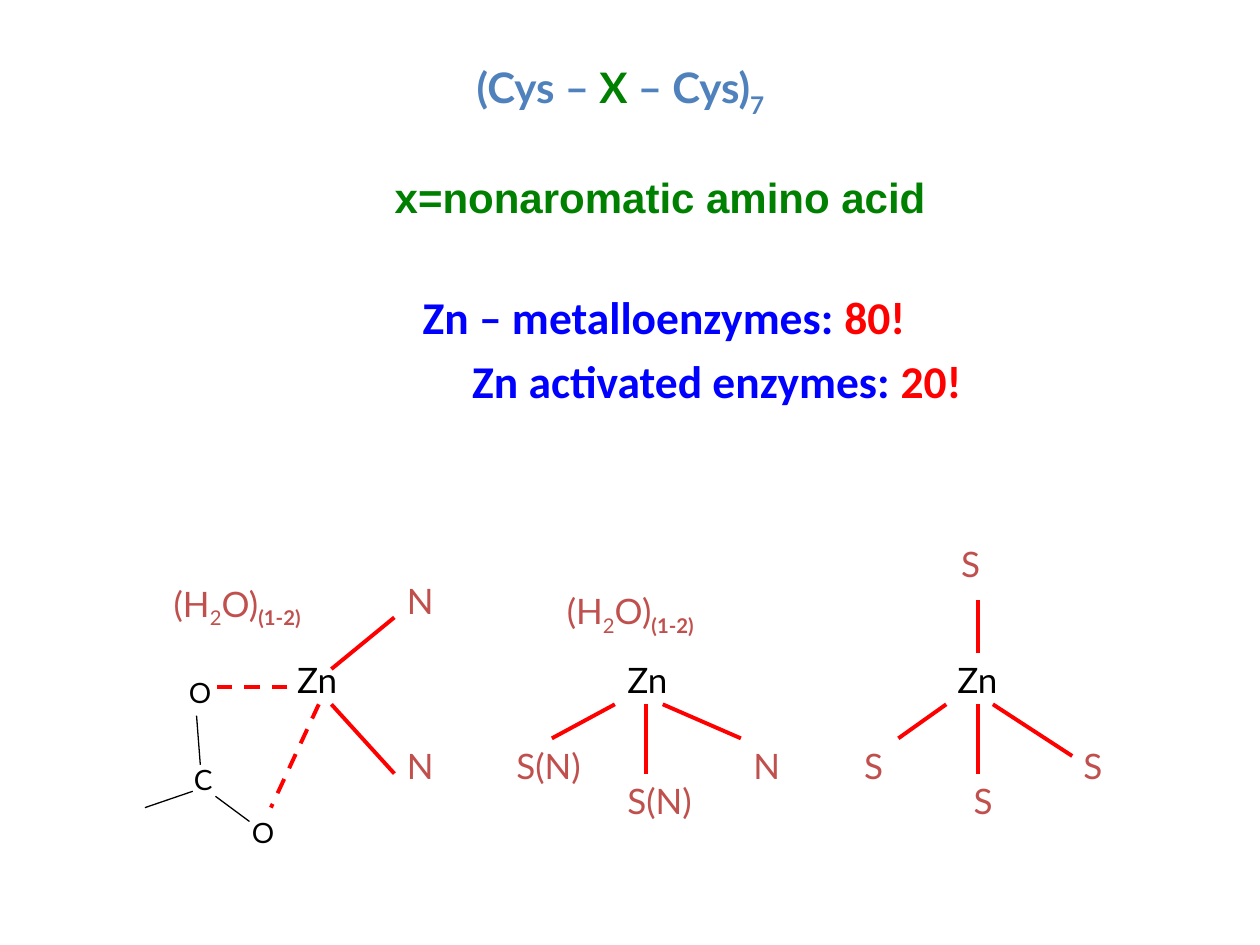
from pptx import Presentation
from pptx.dml.color import RGBColor
from pptx.enum.dml import MSO_LINE
from pptx.enum.shapes import MSO_CONNECTOR as CONNECTOR, MSO_SHAPE as SHAPE
from pptx.enum.text import MSO_ANCHOR as ANCHOR, MSO_AUTO_SIZE as AUTO_SIZE, PP_ALIGN as ALIGN
from pptx.oxml.ns import qn
from pptx.util import Inches, Pt

BLACK, RED, GREEN, BLUE = "000000", "FF0000", "008000", "0000FF"
STEEL, LIGAND, WHITE = "4F81BD", "C0504D", "FFFFFF"
ZINC_TOP = 5.18
ZINC_LEFTS = (2.26, 4.88, 7.5)
WATER_RUNS = [("(H", LIGAND), ("2", LIGAND, True), ("O)", LIGAND), ("(1-2)", LIGAND, True, True)]
WATER_PLACES = ((1.28, 4.57), (4.4, 4.63))
LIGAND_WIDTHS = {"S": 0.36, "N": 0.39, "S(N)": 0.75}
LIGANDS = (
    ("N", 3.13, 4.55), ("N", 3.13, 5.86),
    ("S(N)", 4, 5.86), ("S(N)", 4.88, 6.14), ("N", 5.88, 5.86),
    ("S", 7.53, 4.26), ("S", 8.5, 5.86), ("S", 7.63, 6.14), ("S", 6.76, 5.86),
)
COORDINATION_BONDS = (
    (2.63, 5.31, 3.13, 4.9), (2.63, 5.59, 3.13, 6.14),
    (4.88, 5.59, 4.38, 5.86), (5.13, 5.59, 5.13, 6.14), (5.26, 5.59, 5.88, 5.86),
    (7.51, 5.59, 7.13, 5.86), (7.76, 5.59, 7.76, 6.14), (7.88, 5.59, 8.51, 6),
    (7.76, 5.18, 7.76, 4.76),
)
CARBOXYL_ATOMS = (("O", 1.4, 5.31, 0.36), ("O", 1.9, 6.42, 0.36), ("C", 1.44, 6, 0.34))
DASHED_BONDS = ((2.53, 5.59, 2.15, 6.41), (2.28, 5.45, 1.65, 5.45))
CARBOXYL_BONDS = ((1.53, 6.28, 1.15, 6.41), (1.56, 5.68, 1.59, 6.07), (1.71, 6.32, 1.98, 6.52))


def rgb(value):
    """Turn a hex string into a colour."""
    return RGBColor.from_string(value)


def place(shape, left, top, width, height):
    """Move and size a shape in inches."""
    shape.left, shape.top = Inches(left), Inches(top)
    shape.width, shape.height = Inches(width), Inches(height)


def write_runs(paragraph, runs, size, font="Lato", bold=False, align=ALIGN.LEFT):
    """Write runs given as text, colour, subscript flag and bold flag."""
    paragraph.alignment = align
    for text, color, *flags in runs:
        subscript, strong = (flags + [False, False])[:2]
        run = paragraph.add_run()
        run.text = text
        run.font.name, run.font.size = font, Pt(size)
        run.font.bold = bold or strong
        run.font.color.rgb = rgb(color)
        if subscript:
            run.font._element.set("baseline", "-25000")


def set_frame(text_frame, wrap):
    """Anchor text at the top without automatic sizing."""
    text_frame.auto_size = AUTO_SIZE.NONE
    text_frame.vertical_anchor = ANCHOR.TOP
    text_frame.word_wrap = wrap


def write_heading(shape, box, runs, font):
    """Fill a centred bold heading."""
    place(shape, *box)
    set_frame(shape.text_frame, False)
    write_runs(shape.text_frame.paragraphs[0], runs, 24, font, True, ALIGN.CENTER)


def write_body(body):
    """Fill the body with the two enzyme counts."""
    place(body, 0.51, 2.33, 9, 1.5)
    set_frame(body.text_frame, True)
    lines = (("Zn – metalloenzymes: ", "80!", 0.52, 0.8), ("Zn activated enzymes: ", "20!", 1.36, 1.0))
    for index, (name, count, margin, spacing) in enumerate(lines):
        paragraph = body.text_frame.paragraphs[0] if index == 0 else body.text_frame.add_paragraph()
        write_runs(paragraph, [(name, BLUE), (count, RED)], 26, "Calibri", True, ALIGN.CENTER)
        paragraph.line_spacing = spacing
        properties = paragraph._p.get_or_add_pPr()
        properties.set("marL", str(Inches(margin)))
        properties.set("indent", "0")
        properties.append(properties.makeelement(qn("a:buNone"), {}))


def add_label(group, box, runs, size=20):
    """Add a white box with an atom or ligand name."""
    label = group.shapes.add_shape(SHAPE.RECTANGLE, *map(Inches, box))
    label.shadow.inherit = False
    label.fill.solid()
    label.fill.fore_color.rgb = rgb(WHITE)
    label.line.fill.background()
    set_frame(label.text_frame, False)
    write_runs(label.text_frame.paragraphs[0], runs, size)


def add_bonds(group, bonds, color=RED, width=2.25, dashed=False):
    """Draw straight bonds in one style."""
    for ends in bonds:
        bond = group.shapes.add_connector(CONNECTOR.STRAIGHT, *map(Inches, ends))
        bond.line.color.rgb = rgb(color)
        bond.line.width = Pt(width)
        if dashed:
            bond.line.dash_style = MSO_LINE.DASH
        properties = bond._element.spPr
        properties.append(properties.makeelement(qn("a:effectLst"), {}))


def add_complexes(slide):
    """Draw the three zinc complexes as one group."""
    group = slide.shapes.add_group_shape()
    for left in ZINC_LEFTS:
        add_label(group, (left, ZINC_TOP, 0.51, 0.52), [("Zn", BLACK)])
    for left, top in WATER_PLACES:
        add_label(group, (left, top, 1.37, 0.47), WATER_RUNS)
    for name, left, top in LIGANDS:
        add_label(group, (left, top, LIGAND_WIDTHS[name], 0.43), [(name, LIGAND)])
    add_bonds(group, COORDINATION_BONDS)
    for name, left, top, width in CARBOXYL_ATOMS:
        add_label(group, (left, top, width, 0.37), [(name, BLACK)], 16)
    add_bonds(group, DASHED_BONDS, dashed=True)
    add_bonds(group, CARBOXYL_BONDS, BLACK, 0.75)


def main():
    """Build and save the slide."""
    presentation = Presentation()
    presentation.slide_width, presentation.slide_height = Inches(10), Inches(7.5)
    slide = presentation.slides.add_slide(presentation.slide_layouts[1])
    formula = [("(Cys – ", STEEL), ("X ", GREEN), ("– Cys)", STEEL), ("7", STEEL, True)]
    write_heading(slide.shapes.title, (3.35, 0.44, 3.15, 0.62), formula, "Lato")
    write_body(slide.placeholders[1])
    residue = slide.shapes.add_textbox(0, 0, 0, 0)
    write_heading(residue, (3.35, 1.31, 3.78, 0.62), [("x=nonaromatic amino acid", GREEN)], "Arial")
    add_complexes(slide)
    presentation.save("out.pptx")


if __name__ == "__main__":
    main()
